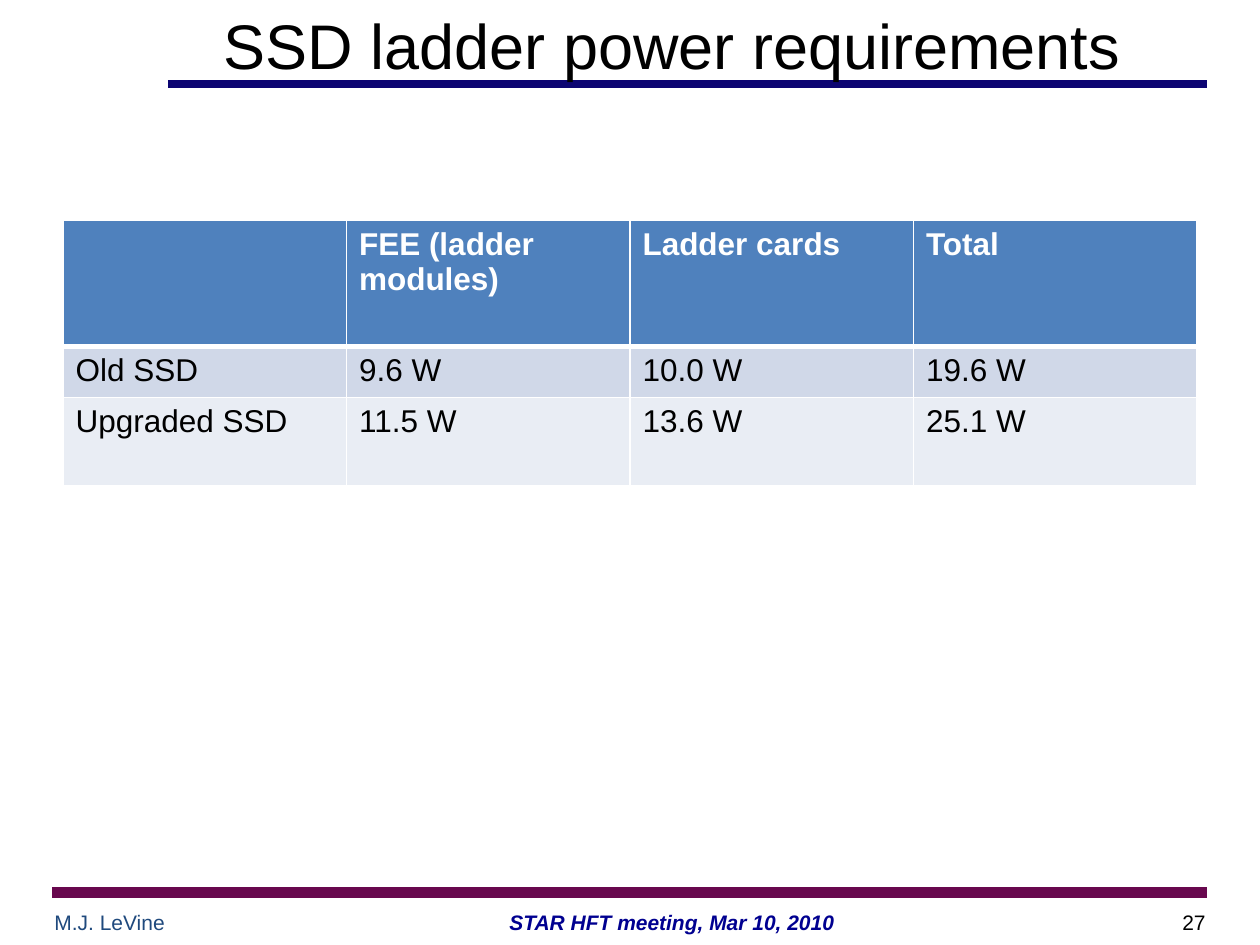
from lxml.etree import SubElement
from pptx import Presentation
from pptx.dml.color import RGBColor
from pptx.enum.shapes import MSO_CONNECTOR
from pptx.enum.text import MSO_ANCHOR, PP_ALIGN
from pptx.oxml.ns import qn
from pptx.util import Pt

COLORS = {
    "black": "000000", "white": "FFFFFF",
    "navy": "0C0572", "plum": "68084E", "author": "1F497D", "meeting": "000090",
    "header": "4F81BD", "odd row": "D0D8E8", "even row": "E9EDF4",
}
FONT = "Arial"

# text, (left, top, width, height), size, color, alignment, bold italic, anchor
TEXTS = [
    ("SSD ladder power requirements", (84, 6, 600, 38), 36, "black",
     PP_ALIGN.CENTER, False, MSO_ANCHOR.MIDDLE),
    ("M.J. LeVine", (24, 516, 84, 18), 12, "author",
     PP_ALIGN.LEFT, False, MSO_ANCHOR.TOP),
    ("STAR HFT meeting, Mar 10, 2010", (150, 516, 468, 21.6), 12, "meeting",
     PP_ALIGN.CENTER, True, MSO_ANCHOR.TOP),
    ("27", (546, 516, 150, 18), 12, "black",
     PP_ALIGN.RIGHT, False, MSO_ANCHOR.TOP),
]
# left, right, y, width, color
RULES = [(96, 690, 48, 4.5, "navy"), (30, 690, 510, 6, "plum")]

POWER = [
    ["", "FEE (ladder modules)", "Ladder cards", "Total"],
    ["Old SSD", "9.6 W", "10.0 W", "19.6 W"],
    ["Upgraded SSD", "11.5 W", "13.6 W", "25.1 W"],
]
TABLE_LEFT, TABLE_TOP, COLUMN_WIDTH = 36, 126, 162
# height, fill, text color, bold
ROW_STYLES = [
    (72, "header", "white", True),
    (29.2, "odd row", "black", False),
    (50.4, "even row", "black", False),
]


def rgb(name):
    return RGBColor.from_string(COLORS[name])


def add_run(paragraph, text, size, color, bold=False, italic=False):
    run = paragraph.add_run()
    run.text = text
    font = run.font
    font.name, font.size, font.bold, font.italic = FONT, Pt(size), bold, italic
    font.color.rgb = rgb(color)


def add_text(slide, text, box, size, color, alignment, emphasis, anchor):
    frame = slide.shapes.add_textbox(*map(Pt, box)).text_frame
    frame.word_wrap = True
    frame.vertical_anchor = anchor
    paragraph = frame.paragraphs[0]
    paragraph.alignment = alignment
    add_run(paragraph, text, size, color, emphasis, emphasis)


def add_rule(slide, left, right, y, width, color):
    rule = slide.shapes.add_connector(
        MSO_CONNECTOR.STRAIGHT, Pt(left), Pt(y), Pt(right), Pt(y))
    rule.line.color.rgb = rgb(color)
    rule.line.width = Pt(width)
    SubElement(rule._element.spPr, qn("a:effectLst"))


def set_borders(cell, widths):
    """Draw white borders; must run before the cell fill is set."""
    properties = cell._tc.get_or_add_tcPr()
    for side, width in widths.items():
        line = SubElement(properties, qn(f"a:{side}"), w=str(Pt(width)))
        fill = SubElement(line, qn("a:solidFill"))
        SubElement(fill, qn("a:srgbClr"), val=COLORS["white"])


def add_power_table(slide):
    rows, columns = len(POWER), len(POWER[0])
    table = slide.shapes.add_table(
        rows, columns, Pt(TABLE_LEFT), Pt(TABLE_TOP), Pt(columns * COLUMN_WIDTH),
        Pt(sum(style[0] for style in ROW_STYLES))).table
    for column in table.columns:
        column.width = Pt(COLUMN_WIDTH)
    for i, (values, style) in enumerate(zip(POWER, ROW_STYLES)):
        height, fill, color, bold = style
        table.rows[i].height = Pt(height)
        borders = {"lnL": 1, "lnR": 1, "lnT": 3 if i == 1 else 1,
                   "lnB": 3 if i == 0 else 1}
        for cell, value in zip(table.rows[i].cells, values):
            set_borders(cell, borders)
            cell.fill.solid()
            cell.fill.fore_color.rgb = rgb(fill)
            if value:
                add_run(cell.text_frame.paragraphs[0], value, 18, color, bold)


def main():
    presentation = Presentation()
    presentation.slide_width, presentation.slide_height = Pt(720), Pt(540)
    slide = presentation.slides.add_slide(presentation.slide_layouts[6])
    for rule in RULES:
        add_rule(slide, *rule)
    for text in TEXTS:
        add_text(slide, *text)
    add_power_table(slide)
    presentation.save("out.pptx")


if __name__ == "__main__":
    main()
